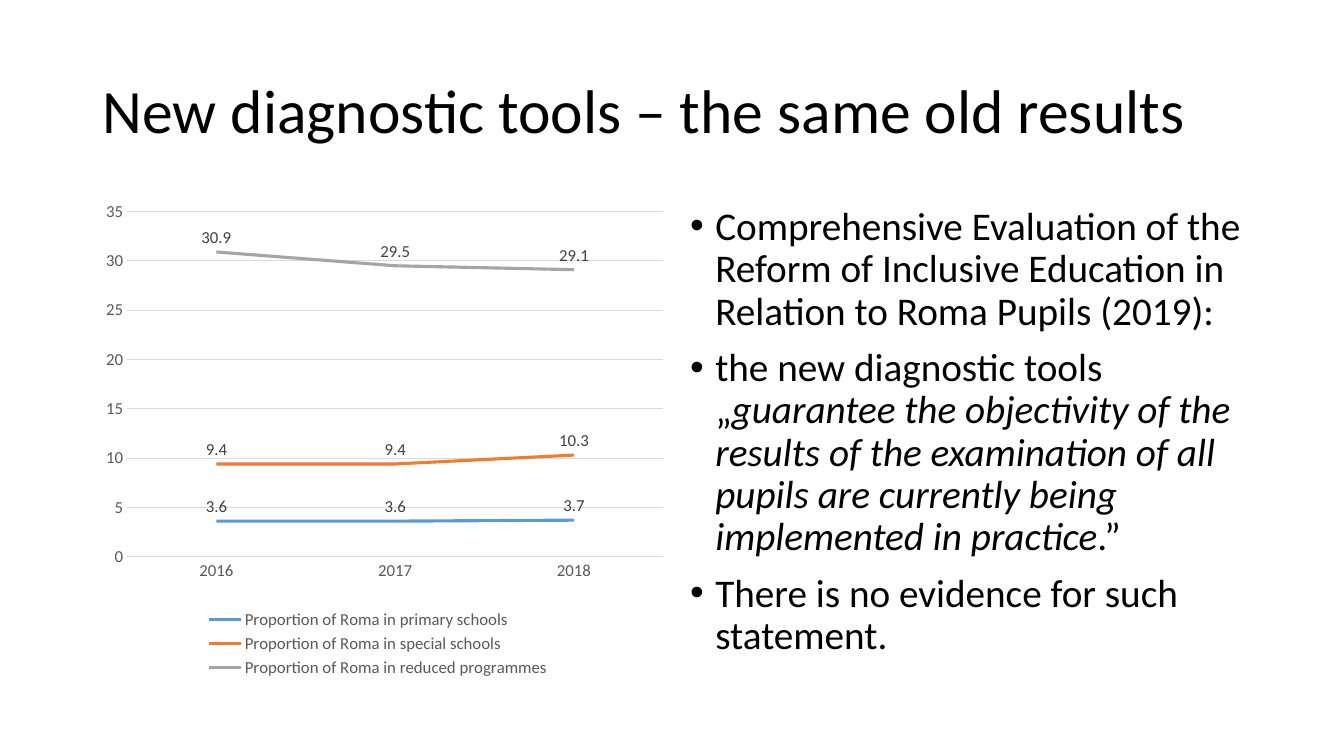
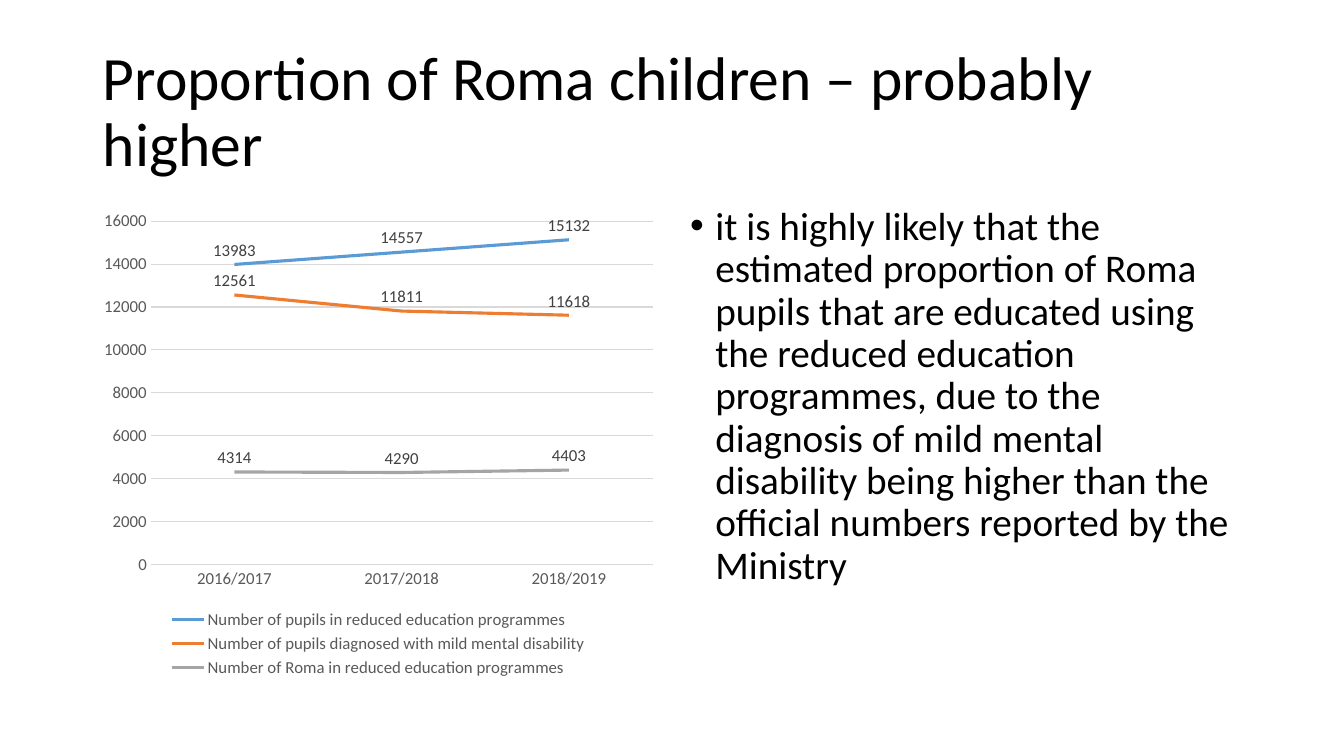
from lxml import etree
from pptx import Presentation
from pptx.chart.data import CategoryChartData
from pptx.dml.color import RGBColor
from pptx.enum.chart import XL_CHART_TYPE, XL_LABEL_POSITION, XL_LEGEND_POSITION, XL_TICK_MARK
from pptx.enum.text import MSO_ANCHOR, MSO_AUTO_SIZE, PP_ALIGN
from pptx.oxml.ns import qn
from pptx.util import Inches, Pt

FONT = "Calibri"
BLACK, AXIS_TEXT, LABEL_TEXT, RULE = "000000", "595959", "404040", "D9D9D9"
SERIES_COLOURS = ("5B9BD5", "ED7D31", "A5A5A5")

SLIDE_WIDTH, SLIDE_HEIGHT = 13.33, 7.5
MARGIN, GUTTER = 0.92, 0.16
COLUMN = (SLIDE_WIDTH - 2 * MARGIN - GUTTER) / 2
TITLE_TOP, TITLE_HEIGHT = 0.4, 1.45
CONTENT_TOP, CONTENT_HEIGHT = 2, 4.76


def colour(hex_code):
    return RGBColor.from_string(hex_code)


def style_font(font, size, hex_code):
    font.name = FONT
    font.size = Pt(size)
    font.color.rgb = colour(hex_code)


def style_line(line, hex_code, width):
    line.color.rgb = colour(hex_code)
    line.width = Pt(width)


def column_box(index):
    """Left, top, width and height of one of the two content columns."""
    left = MARGIN + index * (COLUMN + GUTTER)
    return [Inches(n) for n in (left, CONTENT_TOP, COLUMN, CONTENT_HEIGHT)]


def place(shape, box):
    shape.left, shape.top, shape.width, shape.height = box


def set_title(slide, text):
    title = slide.shapes.title
    place(title, [Inches(n) for n in
                  (MARGIN, TITLE_TOP, SLIDE_WIDTH - 2 * MARGIN, TITLE_HEIGHT)])
    frame = title.text_frame
    frame.text = text
    frame.auto_size = MSO_AUTO_SIZE.NONE
    frame.vertical_anchor = MSO_ANCHOR.MIDDLE
    paragraph = frame.paragraphs[0]
    paragraph.alignment = PP_ALIGN.LEFT
    paragraph.line_spacing = 0.9
    style_font(paragraph.font, 44, BLACK)


def set_bullets(slide, bullets):
    """Fill the right column; each bullet is a list of (text, italic) runs."""
    body = slide.placeholders[1]
    place(body, column_box(1))
    frame = body.text_frame
    frame.auto_size = MSO_AUTO_SIZE.NONE
    for index, bullet in enumerate(bullets):
        paragraph = frame.add_paragraph() if index else frame.paragraphs[0]
        for text, italic in bullet:
            run = paragraph.add_run()
            run.text = text
            if italic:
                run.font.italic = True
        paragraph.line_spacing = 0.9
        paragraph.space_before = Pt(10)
        style_font(paragraph.font, 28, BLACK)
        properties = paragraph.font._element.getparent()
        properties.set("marL", str(Inches(0.25)))
        properties.set("indent", str(-Inches(0.25)))


def fix_plot_area(chart, x, y, width, height):
    """Set the inner plot area as shares of the chart's size."""
    plot_area = chart._chartSpace.chart.plotArea
    for old in plot_area.findall(qn("c:layout")):
        plot_area.remove(old)
    layout = etree.Element(qn("c:layout"))
    manual = etree.SubElement(layout, qn("c:manualLayout"))
    settings = (("layoutTarget", "inner"), ("xMode", "edge"), ("yMode", "edge"),
                ("x", x), ("y", y), ("w", width), ("h", height))
    for name, value in settings:
        etree.SubElement(manual, qn(f"c:{name}")).set("val", str(value))
    plot_area.insert(0, layout)


def style_axes(chart):
    for axis in (chart.category_axis, chart.value_axis):
        axis.major_tick_mark = axis.minor_tick_mark = XL_TICK_MARK.NONE
        style_font(axis.tick_labels.font, 12, AXIS_TEXT)
    style_line(chart.category_axis.format.line, RULE, 0.75)
    chart.value_axis.format.line.fill.background()
    chart.value_axis.has_major_gridlines = True
    style_line(chart.value_axis.major_gridlines.format.line, RULE, 0.75)


def add_line_chart(slide, years, series):
    data = CategoryChartData()
    data.categories = years
    for name, values in series:
        data.add_series(name, values)
    chart = slide.shapes.add_chart(XL_CHART_TYPE.LINE, *column_box(0), data).chart
    chart.has_title = False
    style_font(chart.font, 10, BLACK)
    style_axes(chart)

    chart.has_legend = True
    chart.legend.position = XL_LEGEND_POSITION.BOTTOM
    chart.legend.include_in_layout = False
    style_font(chart.legend.font, 12, AXIS_TEXT)

    plot = chart.plots[0]
    plot.vary_by_categories = False
    plot.has_data_labels = True
    plot.data_labels.show_value = True
    plot.data_labels.position = XL_LABEL_POSITION.ABOVE
    style_font(plot.data_labels.font, 12, LABEL_TEXT)
    for line, hex_code in zip(plot.series, SERIES_COLOURS):
        line.smooth = False
        style_line(line.format.line, hex_code, 2.25)
    return chart


def add_chart_slide(deck, title, bullets, years, series):
    slide = deck.slides.add_slide(deck.slide_layouts[1])
    set_title(slide, title)
    set_bullets(slide, bullets)
    return add_line_chart(slide, years, series)


def main():
    deck = Presentation()
    deck.slide_width, deck.slide_height = Inches(SLIDE_WIDTH), Inches(SLIDE_HEIGHT)

    proportions = add_chart_slide(
        deck,
        "New diagnostic tools – the same old results",
        [
            [("Comprehensive Evaluation of the Reform of Inclusive Education "
              "in Relation to Roma Pupils (2019):", False)],
            [("the new diagnostic tools „", False),
             ("guarantee the objectivity of the results of the examination of all "
              "pupils are currently being implemented in practice", True),
             (".”", False)],
            [("There is no evidence for such statement.", False)],
        ],
        ["2016", "2017", "2018"],
        [
            ("Proportion of Roma in primary schools", (3.6, 3.6, 3.7)),
            ("Proportion of Roma in special schools", (9.4, 9.4, 10.3)),
            ("Proportion of Roma in reduced programmes", (30.9, 29.5, 29.1)),
        ],
    )
    fix_plot_area(proportions, 0.06, 0.02, 0.94, 0.72)

    add_chart_slide(
        deck,
        "Proportion of Roma children – probably higher",
        [[("it is highly likely that the estimated proportion of Roma pupils that "
           "are educated using the reduced education programmes, due to the "
           "diagnosis of mild mental disability being higher than the official "
           "numbers reported by the Ministry", False)]],
        ["2016/2017", "2017/2018", "2018/2019"],
        [
            ("Number of pupils in reduced education programmes", (13983, 14557, 15132)),
            ("Number of pupils diagnosed with mild mental disability", (12561, 11811, 11618)),
            ("Number of Roma in reduced education programmes", (4314, 4290, 4403)),
        ],
    )
    deck.save("out.pptx")


if __name__ == "__main__":
    main()
